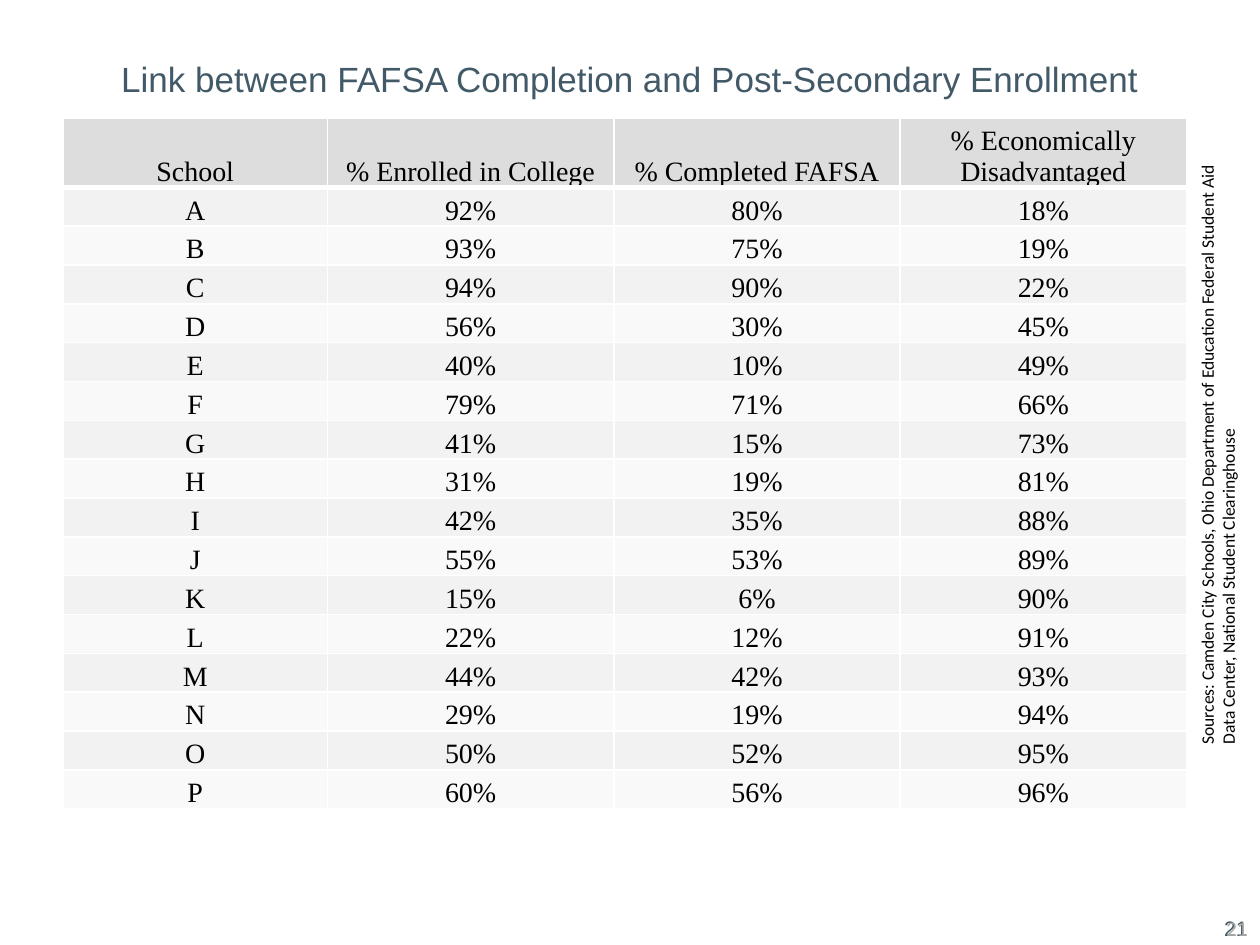
import dataclasses

import pptx
import pptx.dml.color
import pptx.enum.text
import pptx.oxml
import pptx.oxml.ns
import pptx.util
from pptx.util import Cm

ALIGN = pptx.enum.text.PP_ALIGN
ANCHOR = pptx.enum.text.MSO_ANCHOR


@dataclasses.dataclass(frozen=True)
class Theme:
    slate: str = "425968"
    gray: str = "A6A6A6"
    black: str = "000000"
    rule: str = "FFFFFF"
    header_fill: str = "DDDDDD"
    band_fills: tuple = ("F2F2F2", "F9F9F9")
    heading_font: str = "Arial"
    table_font: str = "Times New Roman"
    body_font: str = "Calibri"
    title_size: int = 20
    table_size: int = 16
    number_size: int = 12
    source_size: int = 10


THEME = Theme()

HEADINGS = ("School", "% Enrolled in College", "% Completed FAFSA",
            "% Economically Disadvantaged")
# School, enrolled, completed FAFSA, economically disadvantaged
SCHOOLS = (
    ("A", 92, 80, 18), ("B", 93, 75, 19), ("C", 94, 90, 22), ("D", 56, 30, 45),
    ("E", 40, 10, 49), ("F", 79, 71, 66), ("G", 41, 15, 73), ("H", 31, 19, 81),
    ("I", 42, 35, 88), ("J", 55, 53, 89), ("K", 15, 6, 90), ("L", 22, 12, 91),
    ("M", 44, 42, 93), ("N", 29, 19, 94), ("O", 50, 52, 95), ("P", 60, 56, 96),
)


def rgb(color):
    return pptx.dml.color.RGBColor.from_string(color)


def write_run(paragraph, text, font, size, color, align):
    paragraph.alignment = align
    run = paragraph.add_run()
    run.text = text
    run.font.name = font
    run.font.size = pptx.util.Pt(size)
    run.font.color.rgb = rgb(color)


def add_text(slide, box, text, font, size, color, align, anchor=ANCHOR.TOP):
    label = slide.shapes.add_textbox(*(Cm(length) for length in box))
    label.text_frame.word_wrap = True
    label.text_frame.vertical_anchor = anchor
    write_run(label.text_frame.paragraphs[0], text, font, size, color, align)
    return label


def set_borders(cell, bottom_width):
    widths = {"lnL": 1, "lnR": 1, "lnT": 1, "lnB": bottom_width}
    properties = cell._tc.get_or_add_tcPr()
    for position, (side, width) in enumerate(widths.items()):
        line = pptx.oxml.parse_xml(
            f'<a:{side} {pptx.oxml.ns.nsdecls("a")} w="{pptx.util.Pt(width)}">'
            f'<a:solidFill><a:srgbClr val="{THEME.rule}"/></a:solidFill></a:{side}>')
        properties.insert(position, line)


def fill_cell(cell, text, fill, bottom_width):
    cell.margin_left = cell.margin_right = cell.margin_top = Cm(0.03)
    cell.margin_bottom = 0
    cell.vertical_anchor = ANCHOR.BOTTOM
    cell.fill.solid()
    cell.fill.fore_color.rgb = rgb(fill)
    set_borders(cell, bottom_width)
    write_run(cell.text_frame.paragraphs[0], text, THEME.table_font,
              THEME.table_size, THEME.black, ALIGN.CENTER)


def add_title(slide, box):
    add_text(slide, box, "Link between FAFSA Completion and Post-Secondary Enrollment",
             THEME.heading_font, THEME.title_size, THEME.slate, ALIGN.CENTER,
             ANCHOR.MIDDLE)


def add_school_table(slide, box):
    left, top, width, height = box
    school_width, header_height = 5.33, 1.24
    rows = [HEADINGS] + [(school, *(f"{value}%" for value in values))
                         for school, *values in SCHOOLS]
    table = slide.shapes.add_table(len(rows), len(HEADINGS), Cm(left), Cm(top),
                                   Cm(width), Cm(height)).table
    table.horz_banding = False

    # The first column and the header row differ; the rest share the space
    for index, column in enumerate(table.columns):
        share = (width - school_width) / (len(HEADINGS) - 1)
        column.width = Cm(share if index else school_width)
    for index, row in enumerate(table.rows):
        share = (height - header_height) / len(SCHOOLS)
        row.height = Cm(share if index else header_height)

    for row_index, texts in enumerate(rows):
        fill = THEME.band_fills[(row_index - 1) % 2] if row_index else THEME.header_fill
        for column_index, text in enumerate(texts):
            fill_cell(table.cell(row_index, column_index), text, fill,
                      1 if row_index else 3)


def add_sources(slide, box):
    sources = add_text(
        slide, box,
        "Sources: Camden City Schools, Ohio Department of Education Federal Student "
        "Aid Data Center, National Student Clearinghouse",
        THEME.body_font, THEME.source_size, THEME.black, ALIGN.LEFT)
    sources.rotation = 270


def add_page_number(slide, box):
    # The number is set twice, in two overlapping faces
    for font, color in ((THEME.heading_font, THEME.slate),
                        (THEME.body_font, THEME.gray)):
        add_text(slide, box, "21", font, THEME.number_size, color, ALIGN.RIGHT)


def main():
    deck = pptx.Presentation()
    deck.slide_width, deck.slide_height = Cm(25.4), Cm(19.05)
    slide = deck.slides.add_slide(deck.slide_layouts[6])
    add_page_number(slide, (18.16, 18.34, 7.24, 0.71))
    add_title(slide, (1.27, 0, 22.86, 3.18))
    add_school_table(slide, (1.27, 2.39, 22.65, 13.78))
    add_sources(slide, (18.42, 8.56, 12.27, 1.12))
    deck.save("out.pptx")


if __name__ == "__main__":
    main()
